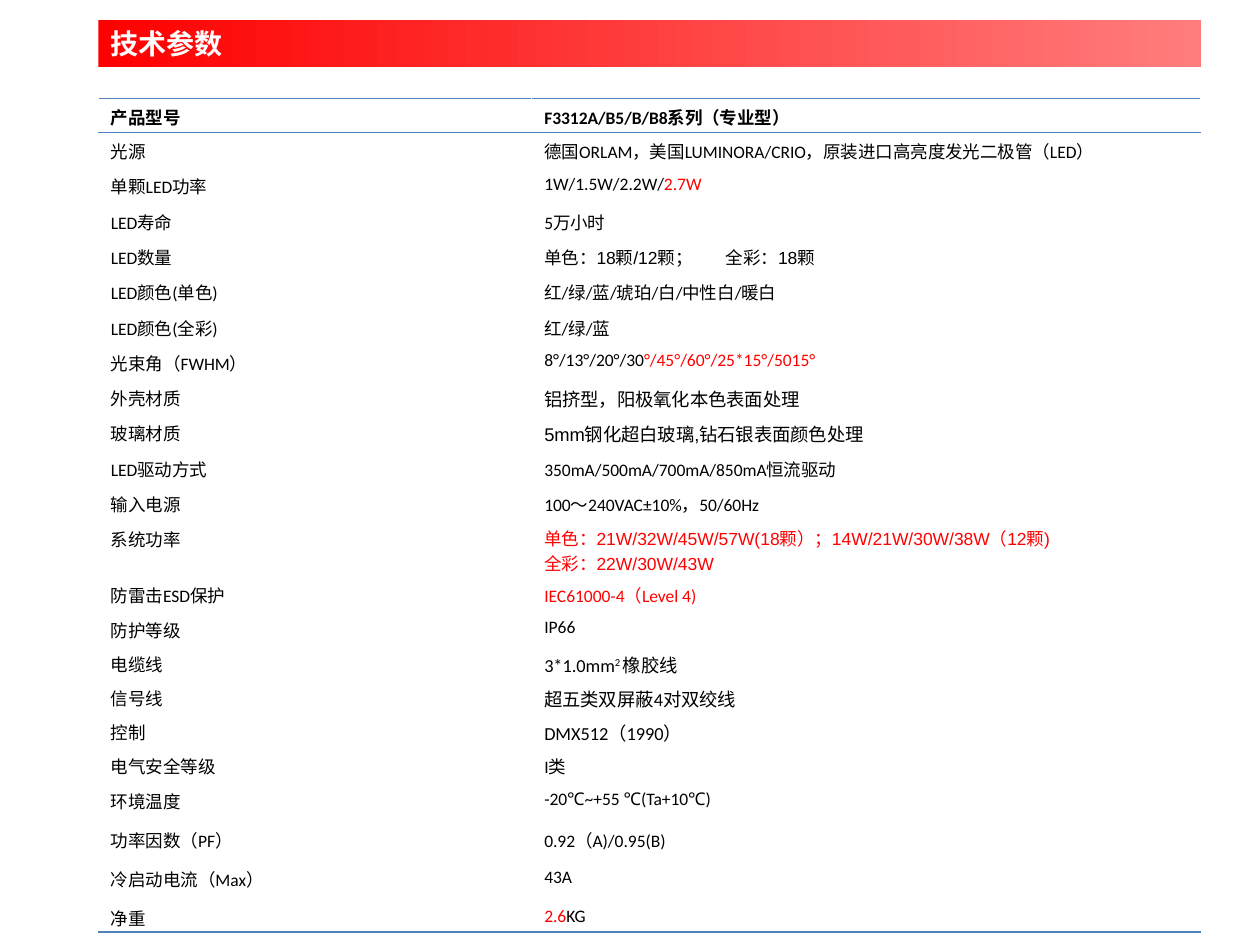
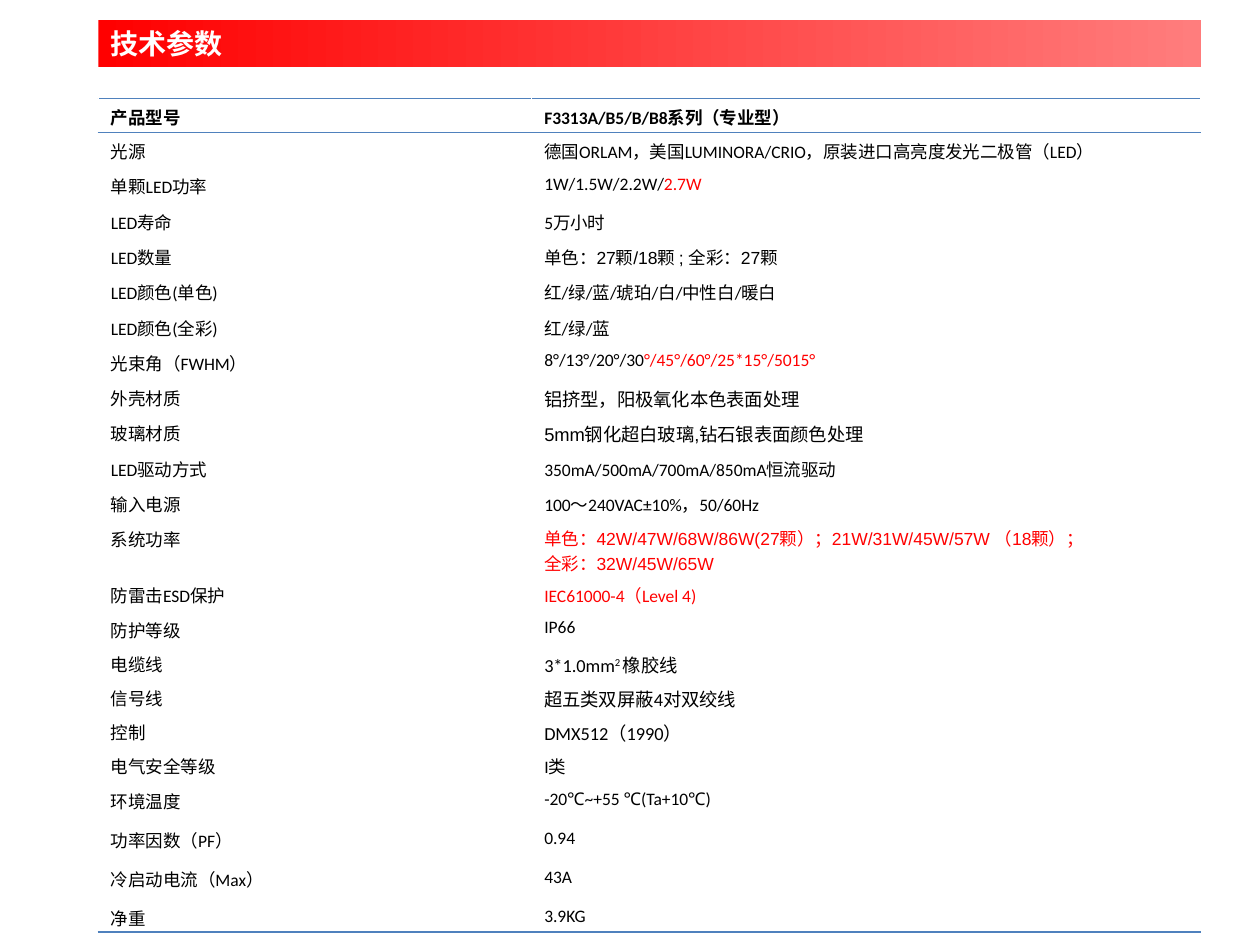
"""Build the technical-parameter slides for two LED fixture series."""
import dataclasses
import typing

import lxml.etree
import pptx
import pptx.dml.color
import pptx.enum.dml
import pptx.enum.text
import pptx.oxml.ns
import pptx.presentation
import pptx.slide
import pptx.table
import pptx.text.text
import pptx.util


@dataclasses.dataclass(frozen=True)
class Theme:
    """Colours, fonts and type sizes shared by the slides."""
    ink: str = "000000"
    accent: str = "FF0000"
    accent_light: str = "FF7D7D"
    rule: str = "4F81BD"
    on_band: str = "FFFFFF"
    latin: str = "Calibri"
    wide_latin: str = "Arial"
    chinese: str = "Noto Sans CJK SC"
    title_size: float = 16
    body_size: float = 10
    large_size: float = 10.5
    rule_width: float = 1


THEME = Theme()
GRID_COLUMNS, GRID_ROWS = 1000, 750
LEFT, BAND_TOP, TABLE_TOP = 78, 16, 78
LABEL_COLUMNS, VALUE_COLUMNS = 344, 531
BAND_ROWS, HEADER_ROWS, TWO_LINE_ROWS = 37, 27, 44
CABLE_ROWS, SPEC_ROWS, TALL_ROWS, LAST_ROWS = 27, 28, 31, 26
TAB_COLUMNS = 144


class Piece(typing.NamedTuple):
    """A stretch of text with one format."""
    text: str
    color: str = THEME.ink
    size: float = THEME.body_size
    font: str = THEME.latin
    bold: bool = False
    raised: bool = False


Line = tuple[Piece, ...]


class Spec(typing.NamedTuple):
    """One table row: a label and the lines of its value."""
    label: Line
    value: tuple[Line, ...]
    rows: int = SPEC_ROWS


@dataclasses.dataclass(frozen=True)
class Fixture:
    """The values that differ between fixture series."""
    series: str
    led_count: str
    system_power: tuple[str, str]
    power_factor: str
    weight: Line


FIXTURES = (
    Fixture("F3312A/B5/B/B8系列（专业型）", "单色：18颗/12颗；\t全彩：18颗",
            ("单色：21W/32W/45W/57W(18颗）；14W/21W/30W/38W（12颗)", "全彩：22W/30W/43W"),
            "0.92（A)/0.95(B)", (Piece("2.6", THEME.accent), Piece("KG"))),
    Fixture("F3313A/B5/B/B8系列（专业型）", "单色：27颗/18颗 ; 全彩：27颗",
            ("单色：42W/47W/68W/86W(27颗）；21W/31W/45W/57W （18颗）；", "全彩：32W/45W/65W"),
            "0.94", (Piece("3.9KG"),)),
)


def spec(label: str, *pieces: Piece | str, rows: int = SPEC_ROWS) -> Spec:
    """Make a row whose value is a single line."""
    line = tuple(Piece(p) if isinstance(p, str) else p for p in pieces)
    return Spec((Piece(label),), (line,), rows)


def large(text: str, font: str = THEME.latin, raised: bool = False) -> Piece:
    """Make a piece in the larger body size."""
    return Piece(text, size=THEME.large_size, font=font, raised=raised)


def fixture_specs(fixture: Fixture) -> list[Spec]:
    """List all table rows for a fixture series."""
    return [
        Spec((Piece("产品型号", bold=True),), ((Piece(fixture.series, bold=True),),), HEADER_ROWS),
        spec("光源", "德国ORLAM，美国LUMINORA/CRIO，原装进口高亮度发光二极管（LED）"),
        spec("单颗LED功率", "1W/1.5W/2.2W/", Piece("2.7W", THEME.accent)),
        spec("LED寿命", "5万小时"),
        spec("LED数量", Piece(fixture.led_count, font=THEME.wide_latin)),
        spec("LED颜色(单色)", "红/绿/蓝/琥珀/白/中性白/暖白"),
        spec("LED颜色(全彩)", "红/绿/蓝"),
        spec("光束角（FWHM）", "8°/13°/20°/30", Piece("°/45°/60°/25*15°/5015°", THEME.accent)),
        spec("外壳材质", large("铝挤型，阳极氧化本色表面处理")),
        spec("玻璃材质", large("5mm钢化超白玻璃,钻石银表面颜色处理", THEME.wide_latin)),
        spec("LED驱动方式", "350mA/500mA/700mA/850mA恒流驱动"),
        spec("输入电源", "100～240VAC±10%，50/60Hz"),
        Spec((Piece("系统功率"),),
             tuple((Piece(power, THEME.accent, font=THEME.wide_latin),)
                   for power in fixture.system_power), TWO_LINE_ROWS),
        spec("防雷击ESD保护", Piece("IEC61000-4（Level 4)", THEME.accent)),
        spec("防护等级", "IP66", rows=CABLE_ROWS),
        spec("电缆线", large("3*1.0mm"), large("2 ", raised=True), large("橡胶线"), rows=CABLE_ROWS),
        spec("信号线", large("超五类双屏蔽4对双绞线"), rows=CABLE_ROWS),
        spec("控制", large("DMX512（1990）"), rows=CABLE_ROWS),
        spec("电气安全等级", "I类"),
        spec("环境温度", "-20℃~+55 ℃(Ta+10℃)", rows=TALL_ROWS),
        spec("功率因数（PF）", fixture.power_factor, rows=TALL_ROWS),
        spec("冷启动电流（Max）", "43A", rows=TALL_ROWS),
        Spec((Piece("净重"),), (fixture.weight,), LAST_ROWS),
    ]


def add_element(parent: typing.Any, tag: str, **attributes: str) -> typing.Any:
    """Append a DrawingML element."""
    return lxml.etree.SubElement(parent, pptx.oxml.ns.qn(tag), attributes)


def write_line(paragraph: pptx.text.text._Paragraph, line: Line) -> None:
    """Write formatted pieces into a paragraph."""
    for piece in line:
        run = paragraph.add_run()
        run.text = piece.text
        run.font.size = pptx.util.Pt(piece.size)
        run.font.bold = piece.bold
        run.font.name = piece.font
        run.font.color.rgb = pptx.dml.color.RGBColor.from_string(piece.color)
        properties = run.font._element
        add_element(properties, "a:ea", typeface=THEME.chinese)
        if piece.raised:
            properties.set("baseline", "30000")


@dataclasses.dataclass(frozen=True)
class Grid:
    """Turns grid columns and rows into slide lengths."""
    width: int
    height: int

    def across(self, columns: float) -> pptx.util.Emu:
        """Return the width of some columns."""
        return pptx.util.Emu(round(self.width * columns / GRID_COLUMNS))

    def down(self, rows: float) -> pptx.util.Emu:
        """Return the height of some rows."""
        return pptx.util.Emu(round(self.height * rows / GRID_ROWS))


def add_title_band(slide: pptx.slide.Slide, grid: Grid) -> None:
    """Turn the title placeholder into the gradient band."""
    band = slide.shapes.title
    band.left, band.top = grid.across(LEFT), grid.down(BAND_TOP)
    band.width, band.height = grid.across(LABEL_COLUMNS + VALUE_COLUMNS), grid.down(BAND_ROWS)
    band.fill.gradient()
    band.fill.gradient_angle = 0
    for stop, color in zip(band.fill.gradient_stops, (THEME.accent, THEME.accent_light)):
        stop.color.rgb = pptx.dml.color.RGBColor.from_string(color)
    frame = band.text_frame
    frame.auto_size = pptx.enum.text.MSO_AUTO_SIZE.NONE
    frame.vertical_anchor = pptx.enum.text.MSO_ANCHOR.MIDDLE
    frame.paragraphs[0].alignment = pptx.enum.text.PP_ALIGN.LEFT
    write_line(frame.paragraphs[0], (
        Piece("技术参数", THEME.on_band, THEME.title_size, THEME.chinese, True),))


def fill_cell(cell: pptx.table._Cell, lines: tuple[Line, ...], edges: list[str], grid: Grid) -> None:
    """Write a cell and rule its given edges."""
    cell.margin_bottom = 0
    if len(lines) > 1:
        cell.margin_top = grid.down(4)
    properties = cell._tc.get_or_add_tcPr()
    for edge in edges:
        border = add_element(properties, edge, w=str(pptx.util.Pt(THEME.rule_width)))
        add_element(add_element(border, "a:solidFill"), "a:srgbClr", val=THEME.rule)
    cell.fill.background()
    for index, line in enumerate(lines):
        frame = cell.text_frame
        paragraph = frame.add_paragraph() if index else frame.paragraphs[0]
        if any("\t" in piece.text for piece in line):
            tabs = add_element(paragraph._p.get_or_add_pPr(), "a:tabLst")
            add_element(tabs, "a:tab", pos=str(grid.across(TAB_COLUMNS)), algn="l")
        write_line(paragraph, line)


def add_spec_table(slide: pptx.slide.Slide, specs: list[Spec], grid: Grid) -> None:
    """Add the two-column parameter table."""
    table = slide.shapes.add_table(
        len(specs), 2, grid.across(LEFT), grid.down(TABLE_TOP),
        grid.across(LABEL_COLUMNS + VALUE_COLUMNS), grid.down(sum(s.rows for s in specs))).table
    table.first_row = table.horz_banding = False
    for column, columns in zip(table.columns, (LABEL_COLUMNS, VALUE_COLUMNS)):
        column.width = grid.across(columns)
    ruled = {0: ["a:lnT", "a:lnB"], 1: ["a:lnT"], len(specs) - 1: ["a:lnB"]}
    for index, row in enumerate(specs):
        table.rows[index].height = grid.down(row.rows)
        for column, lines in enumerate(((row.label,), row.value)):
            fill_cell(table.cell(index, column), lines, ruled.get(index, []), grid)


def main() -> None:
    """Build and save the presentation."""
    presentation = pptx.Presentation()
    presentation.slide_width = pptx.util.Inches(10)
    presentation.slide_height = pptx.util.Inches(7.5)
    grid = Grid(presentation.slide_width, presentation.slide_height)
    title_only = presentation.slide_layouts[5]
    for fixture in FIXTURES:
        slide = presentation.slides.add_slide(title_only)
        add_title_band(slide, grid)
        add_spec_table(slide, fixture_specs(fixture), grid)
    presentation.save("out.pptx")


if __name__ == "__main__":
    main()
